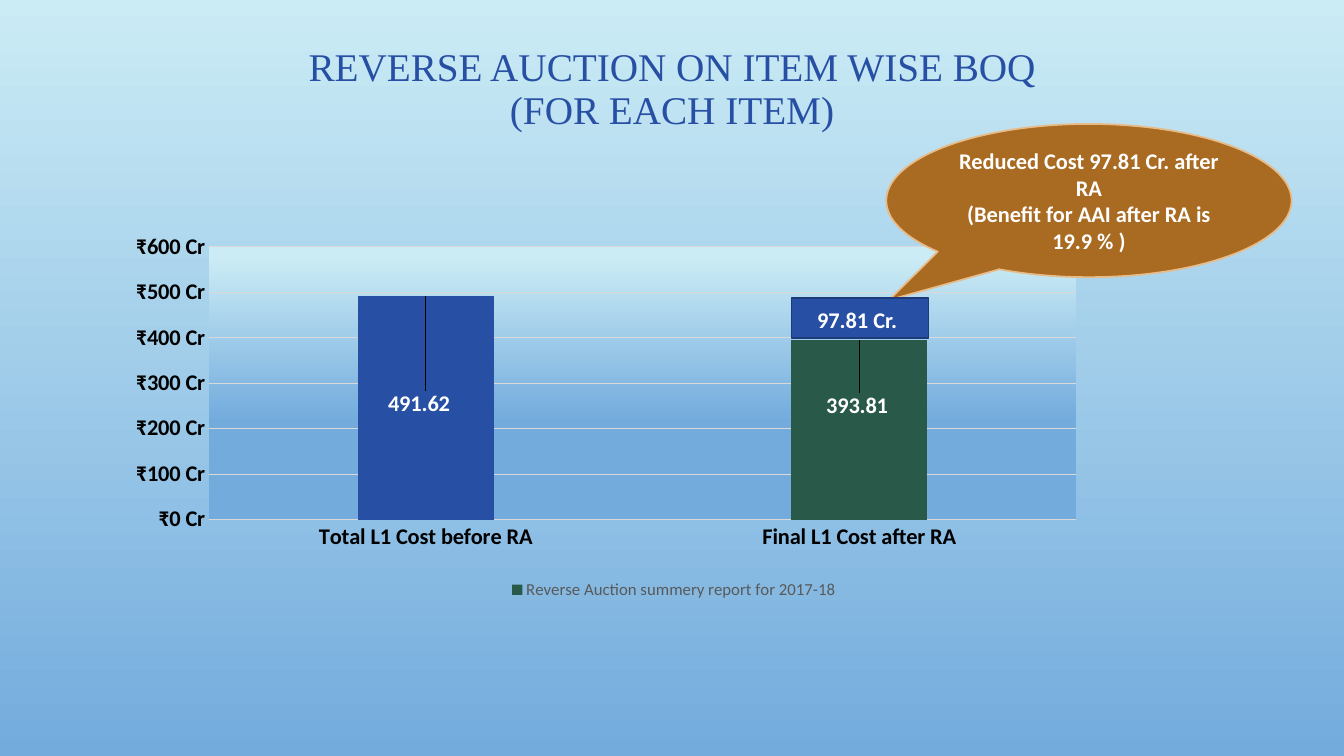
from pptx import Presentation
from pptx.chart.data import CategoryChartData
from pptx.dml.color import RGBColor
from pptx.dml.fill import FillFormat
from pptx.enum.chart import XL_CHART_TYPE, XL_LABEL_POSITION, XL_LEGEND_POSITION, XL_TICK_MARK
from pptx.enum.shapes import MSO_SHAPE
from pptx.enum.text import MSO_ANCHOR, PP_ALIGN
from pptx.oxml import parse_xml
from pptx.oxml.ns import nsdecls
from pptx.oxml.xmlchemy import OxmlElement
from pptx.util import Inches, Pt

COLUMNS = XL_CHART_TYPE.COLUMN_CLUSTERED
OUTSIDE_END = XL_LABEL_POSITION.OUTSIDE_END
LEGEND_BOTTOM = XL_LEGEND_POSITION.BOTTOM
NO_TICK = XL_TICK_MARK.NONE
CALLOUT = MSO_SHAPE.OVAL_CALLOUT
RECTANGLE = MSO_SHAPE.RECTANGLE
MIDDLE = MSO_ANCHOR.MIDDLE
CENTER = PP_ALIGN.CENTER

SKY, AZURE, BLUE, NAVY = "CBECF5", "73ABDD", "274FA4", "1D3A79"
GREEN, BROWN, SAND = "295948", "A96A22", "E7BB88"
WHITE, BLACK, GRAY, SILVER = "FFFFFF", "000000", "595959", "D9D9D9"
STRONG = {"name": "Calibri", "size": Pt(16), "bold": True}
LEADER_LINES = (
    '<c:extLst %s><c:ext uri="{CE6537A1-D6FC-4f65-9D91-7224C49458BB}" '
    'xmlns:c15="http://schemas.microsoft.com/office/drawing/2012/chart">'
    '<c15:showLeaderLines val="1"/></c:ext></c:extLst>' % nsdecls("c")
)


def color(value):
    """Turn a hex string into a colour."""
    return RGBColor.from_string(value)


def style(font, tint, formats):
    """Apply a colour and a dict of format values to a font."""
    font.color.rgb = color(tint)
    for name, value in formats.items():
        setattr(font, name, value)


def outline(line, tint, width):
    """Give a line its colour and width in points."""
    line.color.rgb = color(tint)
    line.width = Pt(width)


def gradient(fill, start, end):
    """Fill from sky at the top to azure at the bottom."""
    fill.gradient()
    fill.gradient_angle = 270
    for stop, tint, position in zip(fill.gradient_stops, (SKY, AZURE), (start, end)):
        stop.color.rgb = color(tint)
        stop.position = position


def manual_layout(**values):
    """Build a manual chart layout from its parts."""
    parts = "".join(f'<c:{name} val="{value}"/>' for name, value in values.items())
    return parse_xml(f'<c:layout {nsdecls("c")}><c:manualLayout>{parts}</c:manualLayout></c:layout>')


class AuctionSlide:
    """Hold the current slide and draw its elements."""

    def __init__(self, page):
        """Keep the page and paint its background."""
        self.page = page
        gradient(page.background.fill, 0, 1)

    def add_text(self, frame, paragraphs):
        """Add centred paragraphs of (text, colour, formats) spans."""
        frame.word_wrap = True
        frame.vertical_anchor = MIDDLE
        for index, spans in enumerate(paragraphs):
            para = frame.paragraphs[0] if index == 0 else frame.add_paragraph()
            para.alignment = CENTER
            for text, tint, formats in spans:
                span = para.add_run()
                span.text = text
                style(span.font, tint, formats)

    def title(self, lines, place):
        """Add the heading with a line break between its lines."""
        frame = self.page.shapes.add_textbox(*map(Inches, place)).text_frame
        frame.word_wrap = True
        frame.vertical_anchor = MIDDLE
        para = frame.paragraphs[0]
        para.text = "\v".join(lines)
        para.alignment = CENTER
        para.line_spacing = 0.9
        for span in para.runs:
            style(span.font, BLUE, {"name": "Times New Roman", "size": Pt(28)})

    def shape(self, kind, place, fill, line, paragraphs, adjustments=()):
        """Add a filled shape with text."""
        box = self.page.shapes.add_shape(kind, *map(Inches, place))
        box.shadow.inherit = False
        box.fill.solid()
        box.fill.fore_color.rgb = color(fill)
        outline(box.line, line, 1.25)
        for index, value in enumerate(adjustments):
            box.adjustments[index] = value
        self.add_text(box.text_frame, paragraphs)

    def chart(self, place, name, costs, label_shifts):
        """Add the cost columns with shifted value labels."""
        data = CategoryChartData()
        data.categories = list(costs)
        data.add_series(name, list(costs.values()))
        chart = self.page.shapes.add_chart(COLUMNS, *map(Inches, place), data).chart
        style(chart.font, BLACK, {"name": "Calibri", "size": Pt(10)})
        chart.has_title = False
        chart.has_legend = True
        chart.legend.position = LEGEND_BOTTOM
        chart.legend.include_in_layout = False
        style(chart.legend.font, GRAY, {"name": "Calibri", "size": Pt(12)})
        self.axes(chart)
        plot = chart.plots[0]
        for key, value in {"gap_width": 219, "overlap": -27, "vary_by_categories": False}.items():
            setattr(plot, key, value)
        self.columns(plot.series[0], label_shifts)
        self.plot_area(chart)

    def axes(self, chart):
        """Style both axes and the gridlines."""
        for axis in (chart.category_axis, chart.value_axis):
            axis.major_tick_mark = axis.minor_tick_mark = NO_TICK
            style(axis.tick_labels.font, BLACK, STRONG)
        outline(chart.category_axis.format.line, SILVER, 0.75)
        scale = chart.value_axis
        scale.minimum_scale, scale.maximum_scale, scale.major_unit = 0, 600, 100
        scale.format.line.fill.background()
        outline(scale.major_gridlines.format.line, SILVER, 0.75)
        scale.tick_labels.number_format = r"[$₹-439]#,##0\ \C\r."
        scale.tick_labels.number_format_is_linked = False

    def columns(self, series, label_shifts):
        """Colour the columns and move their labels inside."""
        first = series.points[0].format.fill
        for fill, tint in ((series.format.fill, GREEN), (first, BLUE)):
            fill.solid()
            fill.fore_color.rgb = color(tint)
        labels = series.data_labels
        labels.show_value = True
        style(labels.font, WHITE, STRONG)
        for index in range(len(label_shifts)):
            label = series.points[index].data_label
            style(label.font, WHITE, STRONG)
            label.position = OUTSIDE_END
        for item, (across, down) in zip(labels._element.findall("{*}dLbl"), label_shifts):
            item.insert(1, manual_layout(x=across, y=down))
        labels._element.append(parse_xml(LEADER_LINES))

    def plot_area(self, chart):
        """Place the plot area and give it a gradient."""
        area = chart._chartSpace.chart.plotArea
        for old in area.findall("{*}layout"):
            area.remove(old)
        area.insert(0, manual_layout(layoutTarget="inner", xMode="edge", yMode="edge",
                                     x=0.093, y=0.053, w=0.759, h=0.724))
        properties = OxmlElement("c:spPr")
        area.append(properties)
        gradient(FillFormat.from_fill_parent(properties), 0.04, 0.64)


def main():
    """Build and save the slide."""
    deck = Presentation()
    deck.slide_width, deck.slide_height = Inches(13.33), Inches(7.5)
    slide = AuctionSlide(deck.slides.add_slide(deck.slide_layouts[6]))
    slide.title(("REVERSE AUCTION ON ITEM WISE BOQ", "(FOR EACH ITEM)"), (1, 0.02, 11.33, 1.75))
    slide.chart(
        (1.02, 2.25, 11.33, 3.74),
        "Reverse Auction summery report for 2017-18",
        {"Total L1 Cost before RA": 491.62, "Final L1 Cost after RA": 393.81},
        ((-0.006, 0.334), (-0.002, 0.22)),
    )
    slide.shape(
        CALLOUT, (8.79, 1.23, 4.02, 1.52), BROWN, SAND,
        [[("Reduced Cost 97.81 Cr. after RA", WHITE, STRONG)],
         [("(Benefit for AAI after RA is 19.9 % )", WHITE, STRONG)]],
        (-0.493, 0.649),
    )
    slide.shape(
        RECTANGLE, (7.85, 2.96, 1.36, 0.39), BLUE, NAVY,
        [[("97.81 Cr.", WHITE, STRONG), (" ", WHITE, {"name": "Calibri", "size": Pt(18)})]],
    )
    deck.save("out.pptx")


if __name__ == "__main__":
    main()
